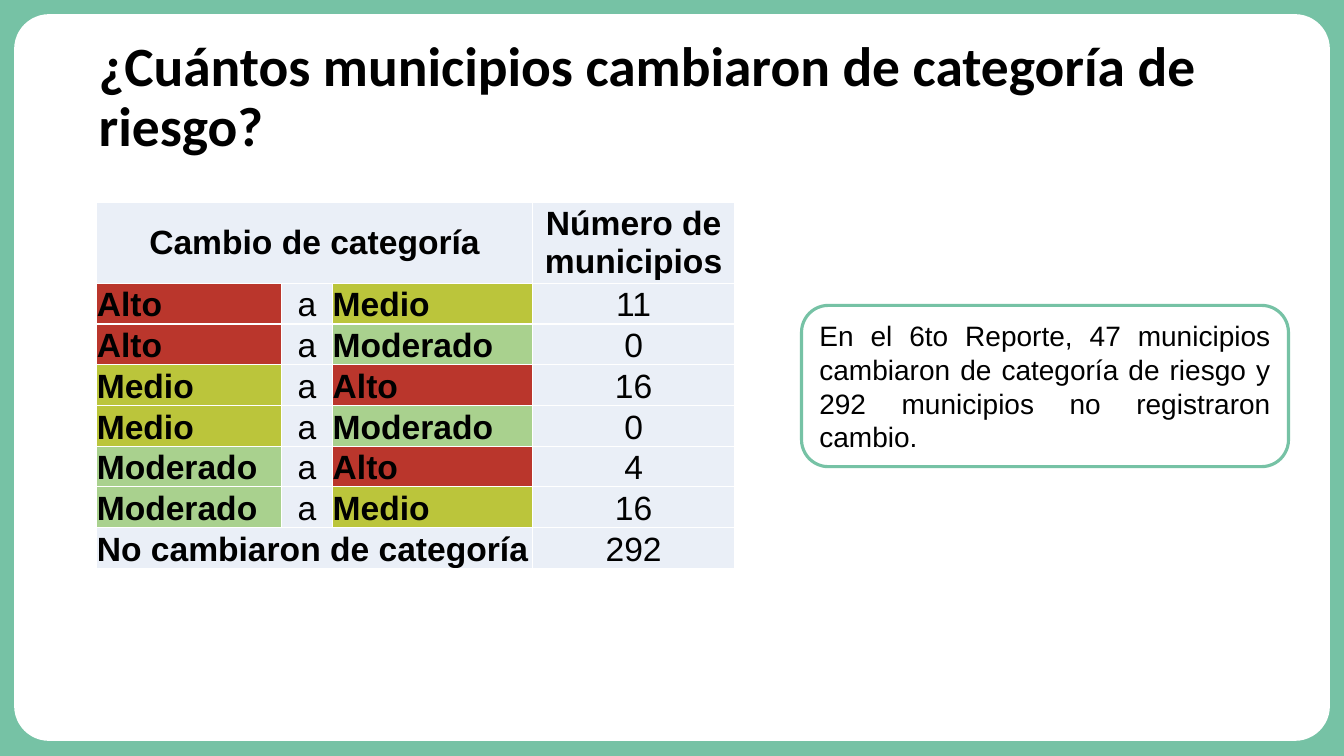
from lxml.etree import SubElement
from pptx import Presentation
from pptx.dml.color import RGBColor
from pptx.enum.shapes import MSO_SHAPE
from pptx.enum.text import MSO_ANCHOR, PP_ALIGN
from pptx.oxml.ns import qn
from pptx.util import Inches, Pt

GREEN = RGBColor(0x76, 0xC2, 0xA5)
WHITE = RGBColor(0xFF, 0xFF, 0xFF)
BLACK = RGBColor(0, 0, 0)
PALE = RGBColor(0xEA, 0xEF, 0xF7)
RISK = {
    "Alto": RGBColor(0xBA, 0x36, 0x2C),
    "Medio": RGBColor(0xBB, 0xC5, 0x3B),
    "Moderado": RGBColor(0xA9, 0xD1, 0x8E),
}


def write(frame, text, align, **font):
    """Put one paragraph in the frame; font holds font attributes."""
    para = frame.paragraphs[0]
    para.alignment = align
    run = para.add_run()
    run.text = text
    run.font.color.rgb = BLACK
    for name, value in font.items():
        setattr(run.font, name, value)
    return para


def edge(cell):
    """Give the cell white borders, which must come before its fill."""
    props = cell._tc.get_or_add_tcPr()
    for side in ("lnL", "lnR", "lnT", "lnB"):
        line = SubElement(props, qn(f"a:{side}"), w=str(Pt(1)))
        fill = SubElement(line, qn("a:solidFill"))
        SubElement(fill, qn("a:srgbClr"), val=str(WHITE))


deck = Presentation()
deck.slide_width = Inches(13.33)
deck.slide_height = Inches(7.5)
slide = deck.slides.add_slide(deck.slide_layouts[6])
slide.background.fill.solid()
slide.background.fill.fore_color.rgb = GREEN
shapes = slide.shapes

# White panel
panel = shapes.add_shape(MSO_SHAPE.ROUNDED_RECTANGLE, Inches(0.14),
                         Inches(0.14), Inches(13.05), Inches(7.21))
panel.adjustments[0] = 0.048
panel.shadow.inherit = False
panel.fill.solid()
panel.fill.fore_color.rgb = WHITE
panel.line.fill.background()

# Title
title = shapes.add_textbox(Inches(0.88), Inches(0.33), Inches(11.5), Inches(1.29))
frame = title.text_frame
frame.word_wrap = True
frame.vertical_anchor = MSO_ANCHOR.MIDDLE
para = write(frame, "¿Cuántos municipios cambiaron de categoría de riesgo?",
             PP_ALIGN.LEFT, name="Calibri", size=Pt(39.6), bold=True)
para.line_spacing = 0.9

# Note
note = shapes.add_shape(MSO_SHAPE.ROUNDED_RECTANGLE, Inches(7.95),
                        Inches(3.03), Inches(4.83), Inches(1.6))
note.shadow.inherit = False
note.fill.background()
note.line.color.rgb = GREEN
note.line.width = Pt(2.25)
note.text_frame.word_wrap = True
write(note.text_frame,
      "En el 6to Reporte, 47 municipios cambiaron de categoría de riesgo y "
      "292 municipios no registraron cambio.",
      PP_ALIGN.JUSTIFY, name="Arial", size=Pt(20))

# Table of changes
rows = [
    ("Cambio de categoría", "", "", "Número de municipios"),
    ("Alto", "a", "Medio", "11"),
    ("Alto", "a", "Moderado", "0"),
    ("Medio", "a", "Alto", "16"),
    ("Medio", "a", "Moderado", "0"),
    ("Moderado", "a", "Alto", "4"),
    ("Moderado", "a", "Medio", "16"),
    ("No cambiaron de categoría", "", "", "292"),
]
widths = [1.83, 0.51, 1.98, 2.01]
head, total = 0.8, 3.63
step = (total - head) / (len(rows) - 1)
table = shapes.add_table(len(rows), len(widths), Inches(0.96), Inches(2.01),
                         Inches(sum(widths)), Inches(total)).table
for col, width in zip(table.columns, widths):
    col.width = Inches(width)

for r, texts in enumerate(rows):
    table.rows[r].height = Inches(step if r else head)
    for c, text in enumerate(texts):
        cell = table.cell(r, c)
        edge(cell)
        cell.fill.solid()
        cell.fill.fore_color.rgb = RISK.get(text, PALE)
        form = {
            "margin_left": 0, "margin_right": 0,
            "margin_top": 0, "margin_bottom": 0,
            "vertical_anchor": MSO_ANCHOR.BOTTOM if r else MSO_ANCHOR.MIDDLE,
        }
        for name, value in form.items():
            setattr(cell, name, value)
        if text:
            left = r > 0 and c in (0, 2)
            write(cell.text_frame, text,
                  PP_ALIGN.LEFT if left else PP_ALIGN.CENTER,
                  name="Arial", size=Pt(24), bold=left or r == 0)

for r in (0, len(rows) - 1):
    table.cell(r, 0).merge(table.cell(r, 2))

deck.save("out.pptx")
